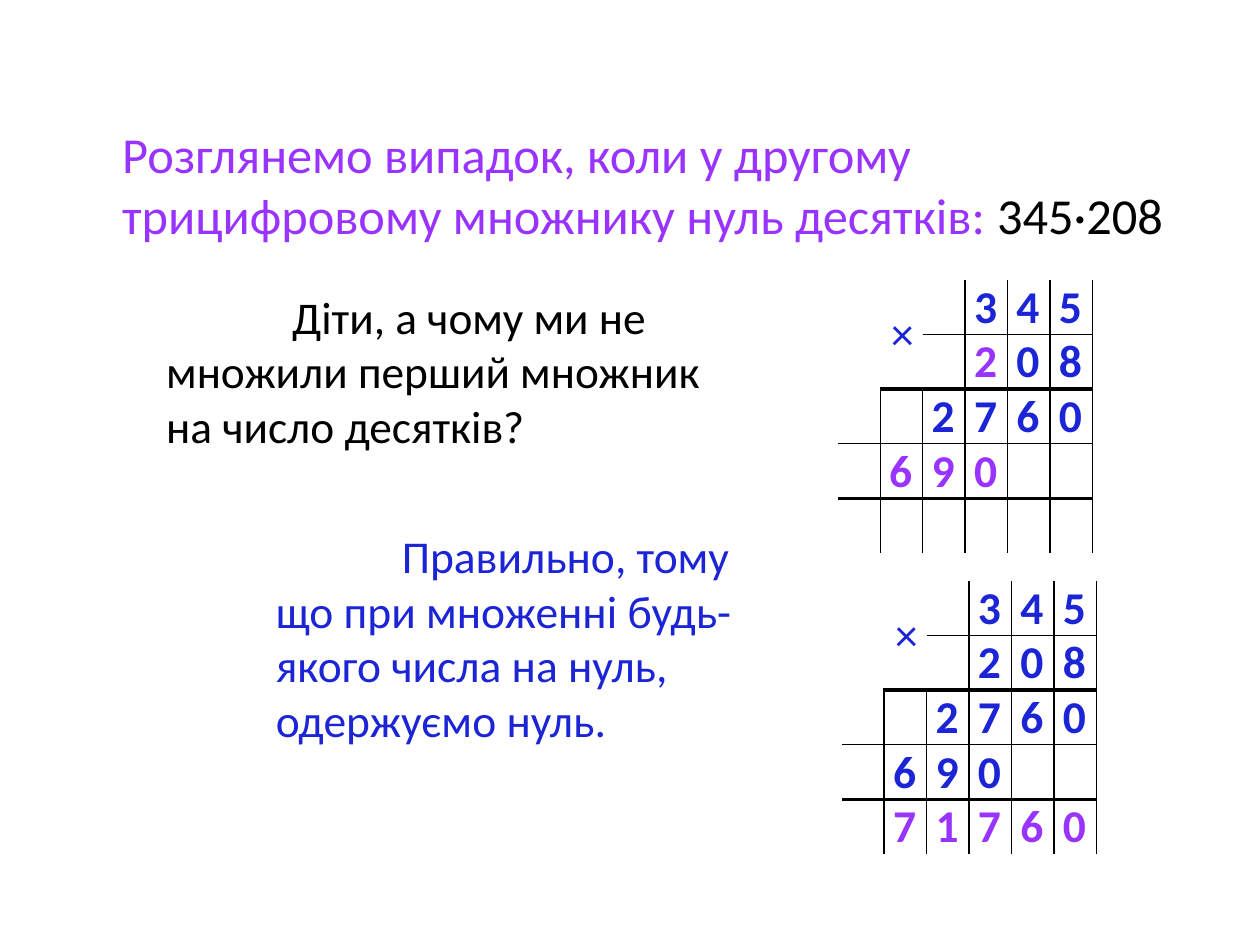
from lxml import etree
from pptx import Presentation
from pptx.dml.color import RGBColor
from pptx.enum.text import MSO_ANCHOR, MSO_AUTO_SIZE, PP_ALIGN
from pptx.oxml.ns import qn
from pptx.util import Cm, Pt

LEFT, RIGHT = PP_ALIGN.LEFT, PP_ALIGN.RIGHT
TOP, MIDDLE = MSO_ANCHOR.TOP, MSO_ANCHOR.MIDDLE
NO_FIT = MSO_AUTO_SIZE.NONE

COLORS = {"black": "000000", "violet": "9933FF", "blue": "1C25D6"}
FONT = "Calibri"
THIN, THICK = 1, 2.25

# Long multiplication: one string per row, a blank is an empty square
COLUMNS, ROWS = 6, 5
SIGN_COLUMN = 1
# Line under each row: first column it covers, and its width
ROW_LINES = [(2, THIN), (1, THICK), (0, THIN), (0, THICK)]


def add_span(para, text, size=26, color="black", bold=False):
    span = para.add_run()
    span.text = text
    span.font.name = FONT
    span.font.size = Pt(size)
    span.font.bold = bold
    span.font.color.rgb = RGBColor.from_string(COLORS[color])
    return span


def row_line(row, column):
    """Width of the line under a row at a column, 0 for none."""
    if not 0 <= row < len(ROW_LINES):
        return 0
    first, width = ROW_LINES[row]
    return width if column >= first else 0


def column_line(row, column):
    """Width of the line to the right of a column, 0 for none."""
    first = 2 if row < 2 else 0
    return THIN if column >= first else 0


def draw_border(cell, side, width):
    line = etree.SubElement(cell._tc.get_or_add_tcPr(), qn(f"a:ln{side}"))
    if not width:
        etree.SubElement(line, qn("a:noFill"))
        return
    line.set("w", str(Pt(width)))
    fill = etree.SubElement(line, qn("a:solidFill"))
    etree.SubElement(fill, qn("a:srgbClr"), val=COLORS["black"])


class SlideBuilder:
    def __init__(self, deck):
        self.page = deck.slides.add_slide(deck.slide_layouts[5])

    def title(self, left, top, width, height, spans):
        box = self.page.shapes.title
        box.left, box.top, box.width, box.height = map(Cm, (left, top, width, height))
        frame = box.text_frame
        frame.auto_size = NO_FIT
        frame.word_wrap = True
        frame.vertical_anchor = MIDDLE
        para = frame.paragraphs[0]
        para.alignment = LEFT
        for text, color in spans:
            add_span(para, text, size=28.8, color=color)

    def paragraph(self, left, top, width, height, text, **style):
        box = self.page.shapes.add_textbox(*map(Cm, (left, top, width, height)))
        box.text_frame.word_wrap = True
        para = box.text_frame.paragraphs[0]
        para._p.get_or_add_pPr().set("indent", str(Cm(2.54)))
        add_span(para, text, **style)

    def multiplication(self, left, top, rows, violet):
        """Squared working; violet holds (row, column) of marked digits."""
        width, row_height = 5.13, 1.1
        frame = self.page.shapes.add_table(
            ROWS, COLUMNS, Cm(left), Cm(top), Cm(width), Cm(row_height * ROWS))
        table = frame.table
        table.first_row = table.horz_banding = False
        for column in table.columns:
            column.width = Cm(width / COLUMNS)
        for column in range(SIGN_COLUMN + 1):
            table.cell(0, column).merge(table.cell(1, column))

        for row, digits in enumerate(rows):
            for column, digit in enumerate(digits):
                cell = table.cell(row, column)
                last_row = row + 1 if cell.is_merge_origin else row
                draw_border(cell, "L", column_line(row, column - 1) if column else 0)
                draw_border(cell, "R", column_line(row, column))
                draw_border(cell, "T", row_line(row - 1, column))
                draw_border(cell, "B", row_line(last_row, column))
                cell.fill.background()
                cell.margin_left = cell.margin_right = Cm(0.18)
                cell.margin_top = cell.margin_bottom = 0
                if digit == " ":
                    continue
                is_sign = digit == "×"
                cell.vertical_anchor = MIDDLE if is_sign else TOP
                para = cell.text_frame.paragraphs[0]
                para.alignment = RIGHT if is_sign else LEFT
                color = "violet" if (row, column) in violet else "blue"
                add_span(para, digit, color=color, bold=not is_sign)


def main():
    deck = Presentation()
    deck.slide_width, deck.slide_height = Cm(25.4), Cm(19.05)
    slide = SlideBuilder(deck)

    # Title
    slide.title(2.21, 2.51, 21.69, 2.39, [
        ("Розглянемо випадок, коли у другому трицифровому множнику нуль десятків: ", "violet"),
        ("345·208", "black"),
    ])

    # Question
    slide.paragraph(3.1, 5.7, 11.91, 5.26,
                    "Діти, а чому ми не множили перший множник на число десятків?",
                    size=25.9)

    # Working before and after the sum
    start = [" × 345", "   208", "  2760", " 690  "]
    slide.multiplication(16.89, 5.64, start + [" " * COLUMNS],
                         {(1, 3), (3, 1), (3, 2), (3, 3)})
    slide.multiplication(16.97, 11.71, start + [" 71760"],
                         {(4, column) for column in range(1, COLUMNS)})

    # Answer
    slide.paragraph(5.31, 10.52, 11, 5.46,
                    "Правильно, тому що при множенні будь-якого числа на нуль, одержуємо нуль.",
                    color="blue")

    deck.save("out.pptx")


if __name__ == "__main__":
    main()
